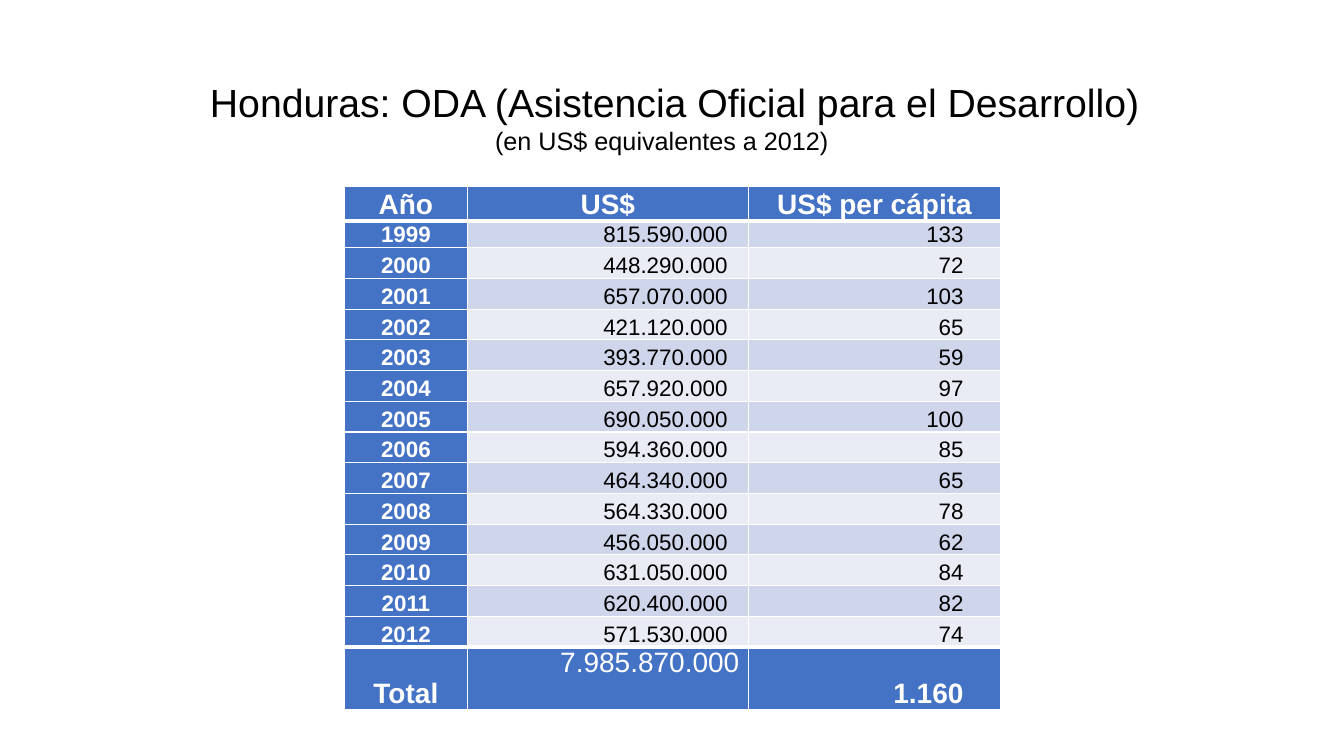
from lxml import etree
from pptx import Presentation
from pptx.dml.color import RGBColor
from pptx.enum import text
from pptx.oxml import ns
from pptx.util import Pt

COLORS = {"ink": "000000", "white": "FFFFFF", "accent": "4472C4",
          "band_dark": "CFD5EA", "band_light": "E9EBF5"}
CENTER, RIGHT = text.PP_ALIGN.CENTER, text.PP_ALIGN.RIGHT

HEADINGS = ("Año", "US$", "US$ per cápita")
FIRST_YEAR = 1999
AID = [
    ("815.590.000", "133"), ("448.290.000", "72"), ("657.070.000", "103"),
    ("421.120.000", "65"), ("393.770.000", "59"), ("657.920.000", "97"),
    ("690.050.000", "100"), ("594.360.000", "85"), ("464.340.000", "65"),
    ("564.330.000", "78"), ("456.050.000", "62"), ("631.050.000", "84"),
    ("620.400.000", "82"), ("571.530.000", "74"),
]
TOTALS = ("Total", "7.985.870.000", "1.160")

COLUMN_WIDTHS = (87.5, 201, 180)
HEADER_HEIGHT, FIRST_HEIGHT, YEAR_HEIGHT, TOTAL_HEIGHT = 24.5, 18.7, 21.95, 44.6
RIGHT_MARGINS = (2, 15, 26.4)
THIN, THICK = 1, 3


def write(paragraph, words, size=16, color="ink", bold=False, align=CENTER):
    paragraph.alignment = align
    run = paragraph.add_run()
    run.text = words
    run.font.name = "Arial"
    run.font.size = Pt(size)
    run.font.bold = bold
    run.font.color.rgb = RGBColor.from_string(COLORS[color])


def set_borders(cell, top=THIN, bottom=THIN):
    """Draw white borders; call before the cell gets its fill."""
    properties = cell._tc.get_or_add_tcPr()
    for side, width in (("L", THIN), ("R", THIN), ("T", top), ("B", bottom)):
        line = etree.SubElement(properties, ns.qn(f"a:ln{side}"), w=str(Pt(width)))
        fill = etree.SubElement(line, ns.qn("a:solidFill"))
        etree.SubElement(fill, ns.qn("a:srgbClr"), val=COLORS["white"])


def fill_cell(cell, words, fill, top=THIN, bottom=THIN, margin_right=2,
              anchor=text.MSO_ANCHOR.BOTTOM, **font):
    set_borders(cell, top, bottom)
    cell.fill.solid()
    cell.fill.fore_color.rgb = RGBColor.from_string(COLORS[fill])
    cell.margin_left, cell.margin_right = Pt(2), Pt(margin_right)
    cell.margin_top = cell.margin_bottom = 0
    cell.vertical_anchor = anchor
    write(cell.text_frame.paragraphs[0], words, **font)


def add_title(slide, left, top, width, height):
    frame = slide.shapes.add_textbox(Pt(left), Pt(top), Pt(width), Pt(height)).text_frame
    frame.word_wrap = True
    frame.vertical_anchor = text.MSO_ANCHOR.MIDDLE
    heading = frame.paragraphs[0]
    heading._p.get_or_add_pPr().set("indent", str(Pt(18)))
    write(heading, "Honduras: ODA (Asistencia Oficial para el Desarrollo)", size=28)
    heading.add_line_break()
    write(heading, "(en US$ equivalentes a 2012)", size=18)


def add_aid_table(slide, left, top):
    heights = [HEADER_HEIGHT, FIRST_HEIGHT, *[YEAR_HEIGHT] * (len(AID) - 1), TOTAL_HEIGHT]
    table = slide.shapes.add_table(
        len(heights), len(HEADINGS), Pt(left), Pt(top),
        Pt(sum(COLUMN_WIDTHS)), Pt(sum(heights))).table
    for column, width in zip(table.columns, COLUMN_WIDTHS):
        column.width = Pt(width)
    for row, height in zip(table.rows, heights):
        row.height = Pt(height)

    strong = {"fill": "accent", "color": "white", "bold": True}
    for column, heading in enumerate(HEADINGS):
        fill_cell(table.cell(0, column), heading, bottom=THICK, size=20, **strong)

    for row, amounts in enumerate(AID, start=1):
        edges = {"top": THICK if row == 1 else THIN,
                 "bottom": THICK if row == len(AID) else THIN}
        fill_cell(table.cell(row, 0), str(FIRST_YEAR + row - 1), **edges, **strong)
        band = "band_dark" if row % 2 else "band_light"
        for column, amount in enumerate(amounts, start=1):
            fill_cell(table.cell(row, column), amount, band, **edges,
                      margin_right=RIGHT_MARGINS[column], align=RIGHT)

    last = len(heights) - 1
    total_label, total_aid, total_per_capita = TOTALS
    fill_cell(table.cell(last, 0), total_label, top=THICK, size=20, **strong)
    fill_cell(table.cell(last, 1), total_aid, "accent", top=THICK, size=20, color="white",
              margin_right=6.4, align=RIGHT, anchor=text.MSO_ANCHOR.TOP)
    fill_cell(table.cell(last, 2), total_per_capita, top=THICK, size=20,
              margin_right=RIGHT_MARGINS[2], align=RIGHT, **strong)


def main():
    deck = Presentation()
    deck.slide_width, deck.slide_height = Pt(960), Pt(540)
    slide = deck.slides.add_slide(deck.slide_layouts[6])
    add_title(slide, 121, 31, 703.5, 105)
    add_aid_table(slide, 246.2, 133.2)
    deck.save("out.pptx")


if __name__ == "__main__":
    main()
